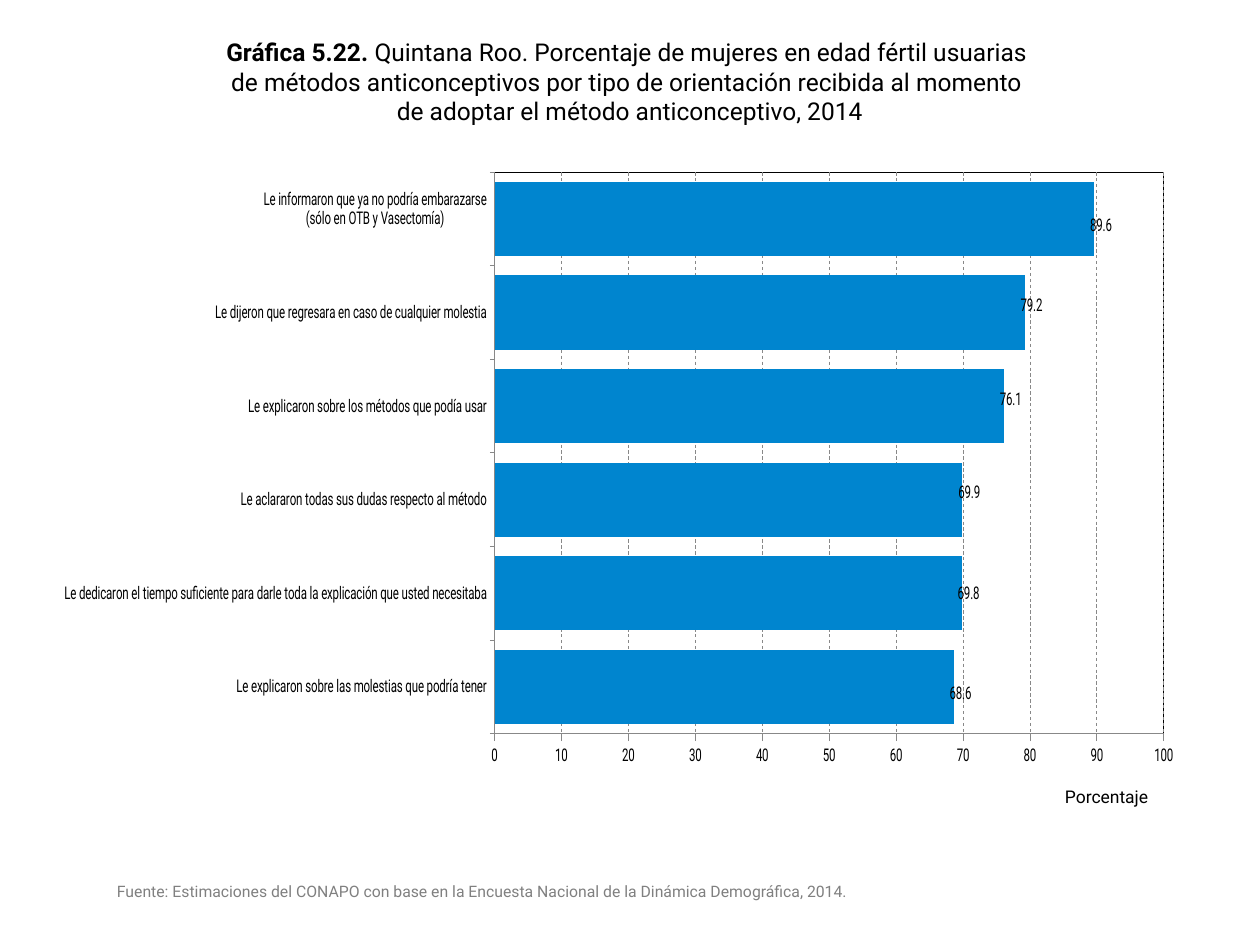
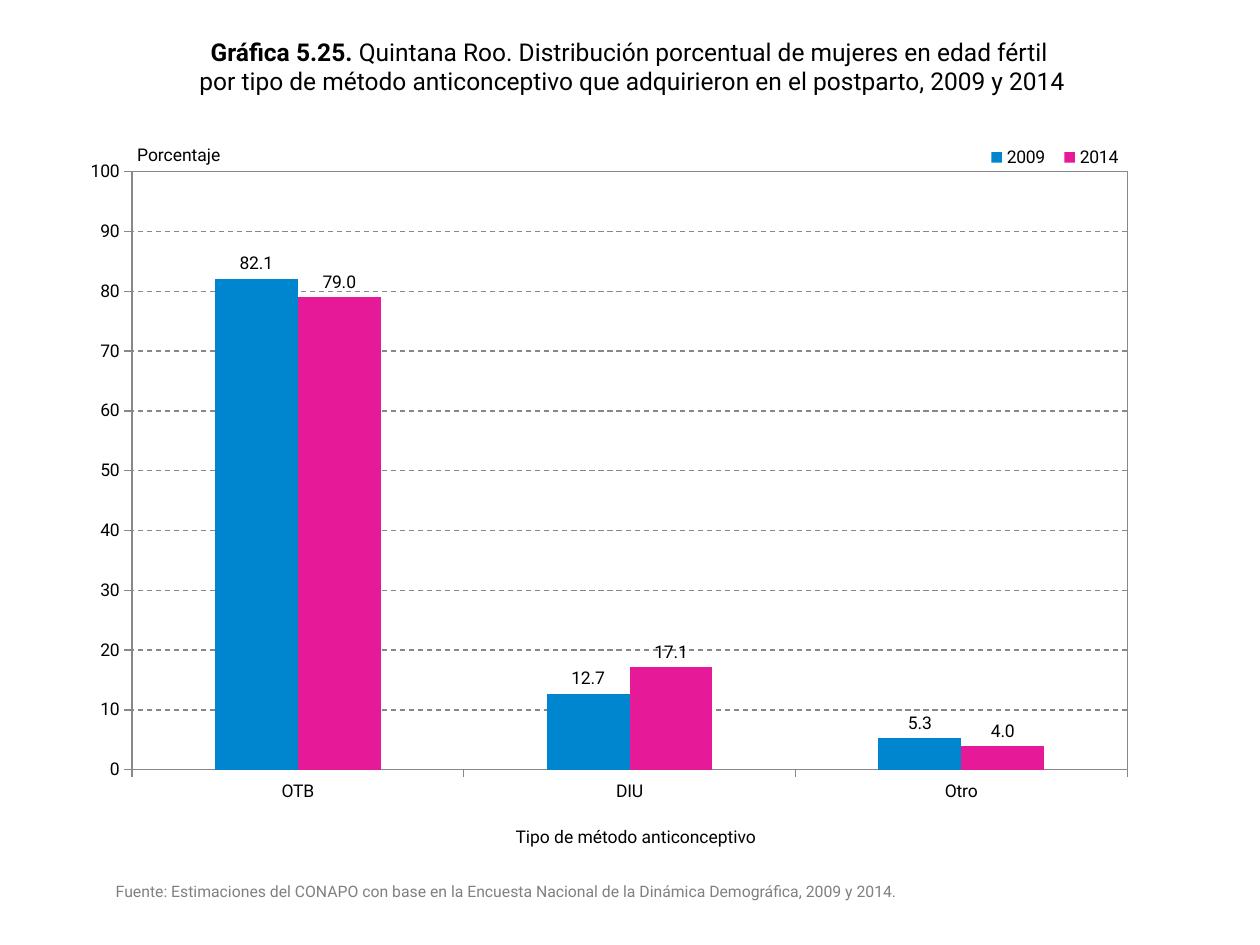
from dataclasses import dataclass

from pptx import Presentation
from pptx.chart.data import CategoryChartData
from pptx.dml.color import RGBColor
from pptx.enum.chart import (XL_CHART_TYPE, XL_LABEL_POSITION,
                             XL_LEGEND_POSITION, XL_TICK_MARK)
from pptx.enum.dml import MSO_LINE
from pptx.enum.text import MSO_ANCHOR, MSO_AUTO_SIZE, PP_ALIGN
from pptx.oxml import parse_xml
from pptx.oxml.ns import nsdecls, qn
from pptx.util import Pt

SCALE = 9144  # EMU in one px, 100 px to the inch


@dataclass(frozen=True)
class Theme:
    font: str = "Roboto"
    ink: str = "000000"
    grey: str = "808080"
    rule: str = "888888"
    blue: str = "0085CF"
    pink: str = "E61998"
    title: int = 14
    body: int = 10
    note: int = 9


THEME = Theme()
SOURCE = ("Fuente: Estimaciones del CONAPO con base en la Encuesta Nacional "
          "de la Dinámica Demográfica, ")

ADVICE = {
    "Le explicaron sobre las molestias que podría tener": 68.6,
    "Le dedicaron el tiempo suficiente para darle toda la explicación "
    "que usted necesitaba": 69.8,
    "Le aclararon todas sus dudas respecto al método": 69.9,
    "Le explicaron sobre los métodos que podía usar": 76.1,
    "Le dijeron que regresara en caso de cualquier molestia": 79.2,
    "Le informaron que ya no podría embarazarse\n"
    "(sólo en OTB y Vasectomía)\n": 89.6,
}
# Shift of each value label, as shares of the chart's width and height
NUDGES = [(-0.01, 0.01), (-0.01, 0), (-0.01, -0.01),
          (-0.01, -0.01), (-0.01, -0.01), (-0.01, 0.01)]

METHODS = ["OTB", "DIU", "Otro"]
YEARS = {"2009": [82.1, 12.7, 5.3], "2014": [79.0, 17.1, 4.0]}


def px(*sizes):
    return [size * SCALE for size in sizes]


def style(font, size, color=THEME.ink, bold=False):
    font.name = THEME.font
    font.size = Pt(size)
    font.bold = bold
    font.color.rgb = RGBColor.from_string(color)


def add_run(para, text, size, color=THEME.ink, bold=False):
    run = para.add_run()
    run.text = text
    style(run.font, size, color, bold)


def add_box(slide, box, align):
    """Add a wrapping text box and return its frame."""
    frame = slide.shapes.add_textbox(*px(*box)).text_frame
    frame.word_wrap = True
    frame.paragraphs[0].alignment = align
    return frame


def add_title(slide, box, number, lines):
    frame = add_box(slide, box, PP_ALIGN.CENTER)
    frame.vertical_anchor = MSO_ANCHOR.MIDDLE
    para = frame.paragraphs[0]
    add_run(para, f"Gráfica {number}. ", THEME.title, bold=True)
    for index, line in enumerate(lines):
        if index:
            para.add_line_break()
        add_run(para, line, THEME.title)


def add_note(slide, box, text, align=PP_ALIGN.LEFT, size=THEME.body,
             color=THEME.ink):
    frame = add_box(slide, box, align)
    frame.auto_size = MSO_AUTO_SIZE.SHAPE_TO_FIT_TEXT
    add_run(frame.paragraphs[0], text, size, color)


def add_source(slide, box, years):
    add_note(slide, box, SOURCE + years, size=THEME.note, color=THEME.grey)


def set_layout(node, index, **parts):
    """Give a chart part a manual layout, placed at the child index."""
    old = node.find(qn("c:layout"))
    if old is not None:
        node.remove(old)
    body = "".join(f'<c:{key} val="{val}"/>' for key, val in parts.items())
    node.insert(index, parse_xml(
        f'<c:layout {nsdecls("c")}><c:manualLayout>{body}'
        '</c:manualLayout></c:layout>'))


def set_area(node, index, x, y, w, h, **target):
    set_layout(node, index, **target, xMode="edge", yMode="edge",
               x=x, y=y, w=w, h=h)


def frame_plot(chart, area, color):
    plot = chart._chartSpace.chart.plotArea
    set_area(plot, 0, *area, layoutTarget="inner")
    plot.append(parse_xml(
        f'<c:spPr {nsdecls("c", "a")}><a:noFill/><a:ln w="9525"><a:solidFill>'
        f'<a:srgbClr val="{color}"/></a:solidFill></a:ln></c:spPr>'))


def set_line(line, dash=None):
    line.color.rgb = RGBColor.from_string(THEME.rule)
    line.width = Pt(0.75)
    if dash:
        line.dash_style = dash


def set_axes(chart):
    for axis in (chart.category_axis, chart.value_axis):
        axis.major_tick_mark = XL_TICK_MARK.OUTSIDE
        axis.minor_tick_mark = XL_TICK_MARK.NONE
        set_line(axis.format.line)
    chart.category_axis.has_major_gridlines = False
    axis = chart.value_axis
    axis.minimum_scale, axis.maximum_scale, axis.major_unit = 0, 100, 10
    axis.has_major_gridlines = True
    set_line(axis.major_gridlines.format.line, MSO_LINE.DASH)
    axis.tick_labels.number_format = "0"
    axis.tick_labels.number_format_is_linked = False


def add_bars(slide, kind, box, cats, table, gap, digits):
    """Add a clustered chart, one series for each entry of the table."""
    data = CategoryChartData()
    data.categories = cats
    for name, vals in table.items():
        data.add_series(name, vals)
    chart = slide.shapes.add_chart(kind, *px(*box), data).chart
    chart.has_title = False
    chart.has_legend = False
    style(chart.font, THEME.body)
    set_axes(chart)
    plot = chart.plots[0]
    plot.gap_width = gap
    plot.vary_by_categories = False
    for series, color in zip(plot.series, (THEME.blue, THEME.pink)):
        series.format.fill.solid()
        series.format.fill.fore_color.rgb = RGBColor.from_string(color)
        labels = series.data_labels
        labels.show_value = True
        labels.number_format = digits
        labels.number_format_is_linked = False
        labels.position = XL_LABEL_POSITION.OUTSIDE_END
    return chart


def nudge(series, shifts):
    for index in range(len(shifts)):
        label = series.points[index].data_label
        label.position = XL_LABEL_POSITION.OUTSIDE_END
    for node, (x, y) in zip(series._element.iter(qn("c:dLbl")), shifts):
        set_layout(node, 1, x=x, y=y)


def add_legend(chart, area):
    chart.has_legend = True
    legend = chart.legend
    legend.position = XL_LEGEND_POSITION.BOTTOM
    legend.include_in_layout = False
    set_area(legend._element, 1, *area)


def draw_advice(slide):
    chart = add_bars(slide, XL_CHART_TYPE.BAR_CLUSTERED, (51, 120, 882, 555),
                     list(ADVICE), {"Series 1": list(ADVICE.values())},
                     26, "0.0")
    frame_plot(chart, (0.066, 0.03, 0.918, 0.803), THEME.ink)
    nudge(chart.plots[0].series[0], NUDGES)
    add_title(slide, (12, 21, 976, 87), "5.22", [
        "Quintana Roo. Porcentaje de mujeres en edad fértil usuarias ",
        "de métodos anticonceptivos por tipo de orientación recibida "
        "al momento ",
        "de adoptar el método anticonceptivo, 2014"])
    add_note(slide, (803, 619, 118, 27), "Porcentaje", PP_ALIGN.RIGHT)
    add_source(slide, (83, 695, 780, 25), "2014.")


def draw_methods(slide):
    chart = add_bars(slide, XL_CHART_TYPE.COLUMN_CLUSTERED,
                     (62, 92, 871, 598), METHODS, YEARS, 200, "#,##0.0")
    frame_plot(chart, (0.049, 0.074, 0.907, 0.794), THEME.rule)
    add_legend(chart, (0.82, 0.035, 0.14, 0.04))
    add_note(slide, (99, 109, 118, 27), "Porcentaje")
    add_note(slide, (343, 651, 323, 27), "Tipo de método anticonceptivo",
             PP_ALIGN.CENTER)
    add_source(slide, (82, 695, 831, 25), "2009 y 2014.")
    add_title(slide, (43, 21, 918, 63), "5.25", [
        "Quintana Roo. Distribución porcentual de mujeres en edad fértil ",
        "por tipo de método anticonceptivo que adquirieron en el "
        "postparto, 2009 y 2014"])


def main():
    deck = Presentation()
    deck.slide_width, deck.slide_height = px(1000, 750)
    for draw in (draw_advice, draw_methods):
        draw(deck.slides.add_slide(deck.slide_layouts[6]))
    deck.save("out.pptx")


if __name__ == "__main__":
    main()
